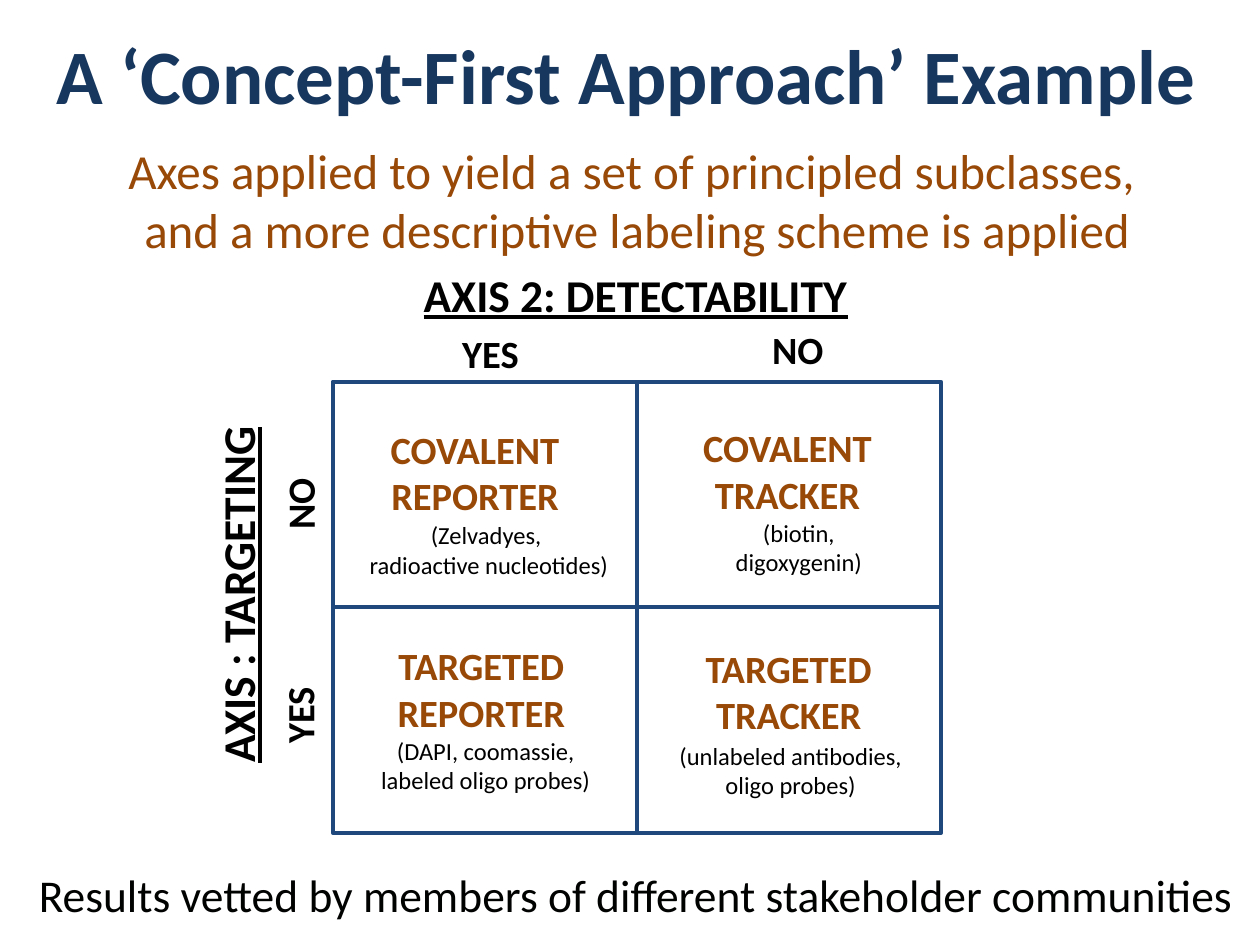
from lxml import etree
from pptx import Presentation
from pptx.dml.color import RGBColor
from pptx.enum.shapes import MSO_CONNECTOR, MSO_SHAPE
from pptx.enum.text import MSO_AUTO_SIZE, PP_ALIGN
from pptx.oxml.ns import qn
from pptx.util import Emu, Pt

RECT = MSO_SHAPE.RECTANGLE
STRAIGHT = MSO_CONNECTOR.STRAIGHT
GROW = MSO_AUTO_SIZE.SHAPE_TO_FIT_TEXT
LEFT, CENTER = PP_ALIGN.LEFT, PP_ALIGN.CENTER
TOP_SIDE, LEFT_SIDE, BOTTOM_SIDE, RIGHT_SIDE = range(4)

COLORS = {
    "title": "17375E",
    "accent": "984807",
    "grid": "1F497D",
    "text": "000000",
    "footer": "000200",
    "white": "FFFFFF",
}


def px(n):
    return Emu(n * 9144)


def rgb(name):
    return RGBColor.from_string(COLORS[name])


class Deck:
    font = "Calibri"
    line_width = Pt(2.25)

    def __init__(self, width, height):
        self.prs = Presentation()
        self.prs.slide_width, self.prs.slide_height = px(width), px(height)
        self.s = self.prs.slides.add_slide(self.prs.slide_layouts[6])

    def text(self, box, lines, size, color="text", bold=False, underline=False,
             align=CENTER, wrap=False, rotation=0, fill=None):
        sp = self.s.shapes.add_textbox(*map(px, box))
        sp.rotation = rotation
        if fill:
            sp.fill.solid()
            sp.fill.fore_color.rgb = rgb(fill)
        tf = sp.text_frame
        tf.word_wrap = wrap
        tf.auto_size = GROW
        for i, line in enumerate(lines):
            p = tf.add_paragraph() if i else tf.paragraphs[0]
            p.alignment = align
            r = p.add_run()
            r.text = line
            r.font.name = self.font
            r.font.size = Pt(size)
            r.font.bold = bold
            r.font.underline = underline
            r.font.color.rgb = rgb(color)

    def frame(self, box):
        sp = self.s.shapes.add_shape(RECT, *map(px, box))
        sp.shadow.inherit = False
        sp.fill.background()
        sp.line.color.rgb = rgb("grid")
        sp.line.width = self.line_width
        return sp

    def divider(self, sp, start, end):
        c = self.s.shapes.add_connector(STRAIGHT, 0, 0, 0, 0)
        c.begin_connect(sp, start)
        c.end_connect(sp, end)
        c.line.color.rgb = rgb("grid")
        c.line.width = self.line_width
        etree.SubElement(c._element.spPr, qn("a:effectLst"))


def main():
    deck = Deck(1000, 750)

    deck.text((35, 17, 934, 84), ["A ‘Concept-First Approach’ Example"], 44,
              "title", bold=True, align=LEFT, wrap=True)
    deck.text((40, 107, 931, 104),
              ["Axes applied to yield a set of principled subclasses, ",
               "and a more descriptive labeling scheme is applied"],
              28, "accent", wrap=True)

    matrix = deck.frame((264, 303, 483, 358))
    deck.divider(matrix, TOP_SIDE, BOTTOM_SIDE)
    deck.divider(matrix, LEFT_SIDE, RIGHT_SIDE)

    axes = [
        ((325, 207, 359, 54), "AXIS 2: DETECTABILITY", False, 0),
        ((-39, 445, 455, 54), "AXIS : TARGETING", True, 270),
    ]
    for box, label, wrap, rotation in axes:
        deck.text(box, [label], 26, bold=True, underline=True, wrap=wrap,
                  rotation=rotation)

    levels = [
        ((357, 257, 65, 47), "YES", LEFT, False, 0),
        ((603, 254, 75, 47), "NO", LEFT, True, 0),
        ((204, 373, 68, 47), "NO ", CENTER, False, 270),
        ((205, 544, 65, 47), "YES", CENTER, False, 270),
    ]
    for box, label, align, wrap, rotation in levels:
        deck.text(box, [label], 22, bold=True, align=align, wrap=wrap,
                  rotation=rotation)

    cells = [
        ((298, 333, 158, 84), ["COVALENT", "REPORTER"],
         (282, 408, 212, 57), ["(Zelvadyes, ", "radioactive nucleotides)"], None),
        ((546, 332, 158, 84), ["COVALENT", "TRACKER"],
         (573, 406, 122, 57), ["(biotin,", "digoxygenin)"], None),
        ((304, 505, 156, 84), ["TARGETED", "REPORTER"],
         (284, 579, 203, 57), ["(DAPI, coomassie,", "labeled oligo probes)"], None),
        ((548, 507, 156, 84), ["TARGETED", "TRACKER"],
         (528, 583, 199, 57), ["(unlabeled antibodies,", "oligo probes)"], "white"),
    ]
    for name_box, name, example_box, examples, fill in cells:
        deck.text(name_box, name, 22, "accent", bold=True)
        deck.text(example_box, examples, 14, fill=fill)

    deck.text((-19, 683, 1048, 54),
              ["Results vetted by members of different stakeholder communities"],
              26, "footer", wrap=True)

    deck.prs.save("out.pptx")


if __name__ == "__main__":
    main()
